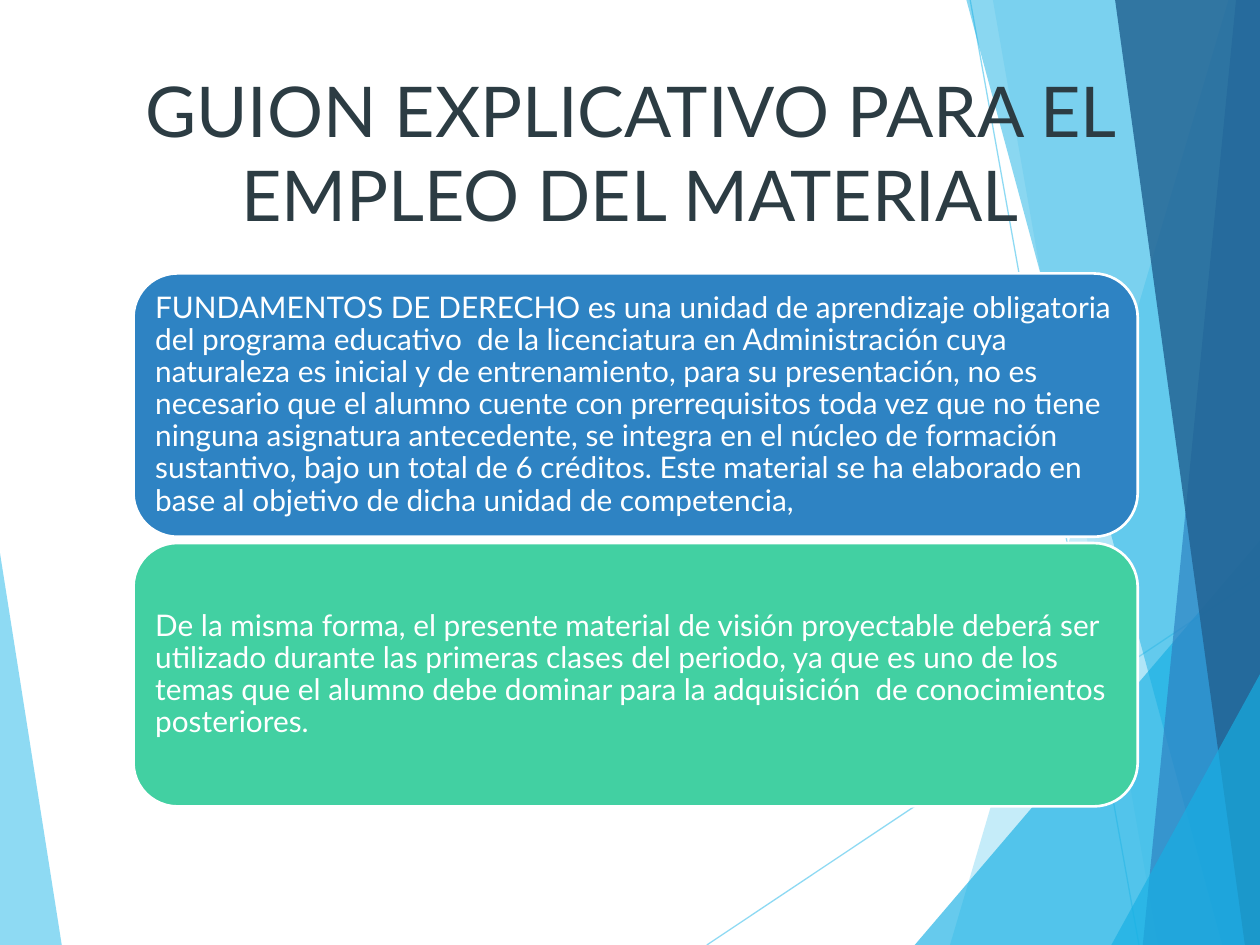
import lxml.etree
import pptx
import pptx.dml.color
import pptx.enum.shapes
import pptx.enum.text
import pptx.oxml.ns
import pptx.util

Inches = pptx.util.Inches
FONT = "Lato"
SKY = "5FCBEF"
CYAN = "17B0E4"
BLUE = "2E83C3"
NAVY = "226292"
GREEN = "42D0A2"
WHITE = "FFFFFF"
SLATE = "2C3C43"

LEFT_FACET = ([(0, 4.39), (0.49, 7.5), (0, 7.5)], SKY, 70)
RAYS = [((5.61, 7.5), (10, 4.57)), ((7.7, 0), (9.04, 7.5))]
RIGHT_FACETS = [
    ([(9.75, 0), (7.54, 7.5), (10, 7.5), (10, 0)], SKY, 36),
    ([(7.88, 0), (9.19, 7.5), (10, 7.5), (10, 0)], SKY, 20),
    ([(7.26, 7.5), (10, 4.29), (10, 7.5)], CYAN, 66),
    ([(7.67, 0), (9.7, 7.5), (10, 7.5), (10, 0)], CYAN, 50),
    ([(9.81, 0), (9.07, 7.5), (10, 7.5), (10, 0)], BLUE, 70),
    ([(8.85, 0), (9.88, 7.5), (10, 7.5), (10, 0)], NAVY, 82),
    ([(8.82, 7.5), (10, 5.35), (10, 7.5)], CYAN, 66),
]

TITLE = "GUION EXPLICATIVO PARA EL EMPLEO DEL MATERIAL"
CARDS = [
    (
        "FUNDAMENTOS DE DERECHO es una unidad de aprendizaje obligatoria del "
        "programa educativo  de la licenciatura en Administración cuya naturaleza "
        "es inicial y de entrenamiento, para su presentación, no es necesario que "
        "el alumno cuente con prerrequisitos toda vez que no tiene ninguna "
        "asignatura antecedente, se integra en el núcleo de formación sustantivo, "
        "bajo un total de 6 créditos. Este material se ha elaborado en base al "
        "objetivo de dicha unidad de competencia,",
        BLUE,
    ),
    (
        "De la misma forma, el presente material de visión proyectable deberá ser  "
        "utilizado durante las primeras clases del periodo, ya que es uno de los "
        "temas que el alumno debe dominar para la adquisición  de conocimientos "
        "posteriores.",
        GREEN,
    ),
]


def paint(color_format, color, opacity=100):
    color_format.rgb = pptx.dml.color.RGBColor.from_string(color)


def paint_fill(fill, color, opacity=100):
    fill.solid()
    paint(fill.fore_color, color)
    if opacity < 100:
        set_opacity(fill, opacity)


def set_opacity(fill, opacity):
    tag = pptx.oxml.ns.qn("a:srgbClr")
    color_element = fill._xPr.find(".//" + tag)
    alpha = lxml.etree.SubElement(color_element, pptx.oxml.ns.qn("a:alpha"))
    alpha.set("val", str(opacity * 1000))


def write_text(shape, text, size, color, align):
    frame = shape.text_frame
    frame.text = text
    frame.word_wrap = True
    frame.auto_size = pptx.enum.text.MSO_AUTO_SIZE.NONE
    frame.vertical_anchor = pptx.enum.text.MSO_ANCHOR.MIDDLE
    para = frame.paragraphs[0]
    para.alignment = align
    span = para.runs[0]
    span.font.name = FONT
    span.font.size = pptx.util.Pt(size)
    paint(span.font.color, color)
    return frame


def add_facet(page, points, color, opacity):
    corners = [(Inches(x), Inches(y)) for x, y in points]
    builder = page.shapes.build_freeform(*corners[0])
    builder.add_line_segments(corners[1:], close=True)
    facet = builder.convert_to_shape()
    facet.shadow.inherit = False
    paint_fill(facet.fill, color, opacity)
    facet.line.fill.background()


def add_ray(page, start, end):
    ray = page.shapes.add_connector(
        pptx.enum.shapes.MSO_CONNECTOR.STRAIGHT,
        *[Inches(value) for value in start + end],
    )
    ray.line.width = pptx.util.Pt(0.75)
    paint_fill(ray.line.fill, SKY, 70)
    properties = ray.element.spPr
    lxml.etree.SubElement(properties, pptx.oxml.ns.qn("a:effectLst"))


def add_backdrop(page):
    add_facet(page, *LEFT_FACET)
    for start, end in RAYS:
        add_ray(page, start, end)
    for points, color, opacity in RIGHT_FACETS:
        add_facet(page, points, color, opacity)


def place_title(page, left, top, width, height):
    title = page.shapes.title
    title.left, title.top, title.width, title.height = left, top, width, height
    write_text(title, TITLE, 40, SLATE, pptx.enum.text.PP_ALIGN.CENTER)
    page.shapes.element.append(title.element)


def add_card(page, text, color, left, top, width, height):
    card = page.shapes.add_shape(
        pptx.enum.shapes.MSO_SHAPE.ROUNDED_RECTANGLE, left, top, width, height
    )
    card.shadow.inherit = False
    paint_fill(card.fill, color)
    paint_fill(card.line.fill, WHITE)
    card.line.width = pptx.util.Pt(1.5)
    frame = write_text(card, text, 17, WHITE, pptx.enum.text.PP_ALIGN.LEFT)
    frame.margin_left = frame.margin_right = Inches(0.07)
    frame.margin_top = frame.margin_bottom = Inches(0.07)
    frame.paragraphs[0].line_spacing = 0.9


def add_cards(page, left, top, width, height):
    gap = Inches(0.05)
    card_height = (height - gap * (len(CARDS) - 1)) // len(CARDS)
    for index, (text, color) in enumerate(CARDS):
        card_top = top + index * (card_height + gap)
        add_card(page, text, color, left, card_top, width, card_height)


def main():
    deck = pptx.Presentation()
    deck.slide_width, deck.slide_height = Inches(10), Inches(7.5)
    page = deck.slides.add_slide(deck.slide_layouts.get_by_name("Title Only"))
    paint_fill(page.background.fill, WHITE)
    add_backdrop(page)
    place_title(page, Inches(0.5), Inches(0.77), Inches(9), Inches(0.87))
    add_cards(page, Inches(1.06), Inches(2.17), Inches(7.97), Inches(4.23))
    deck.save("out.pptx")


if __name__ == "__main__":
    main()
